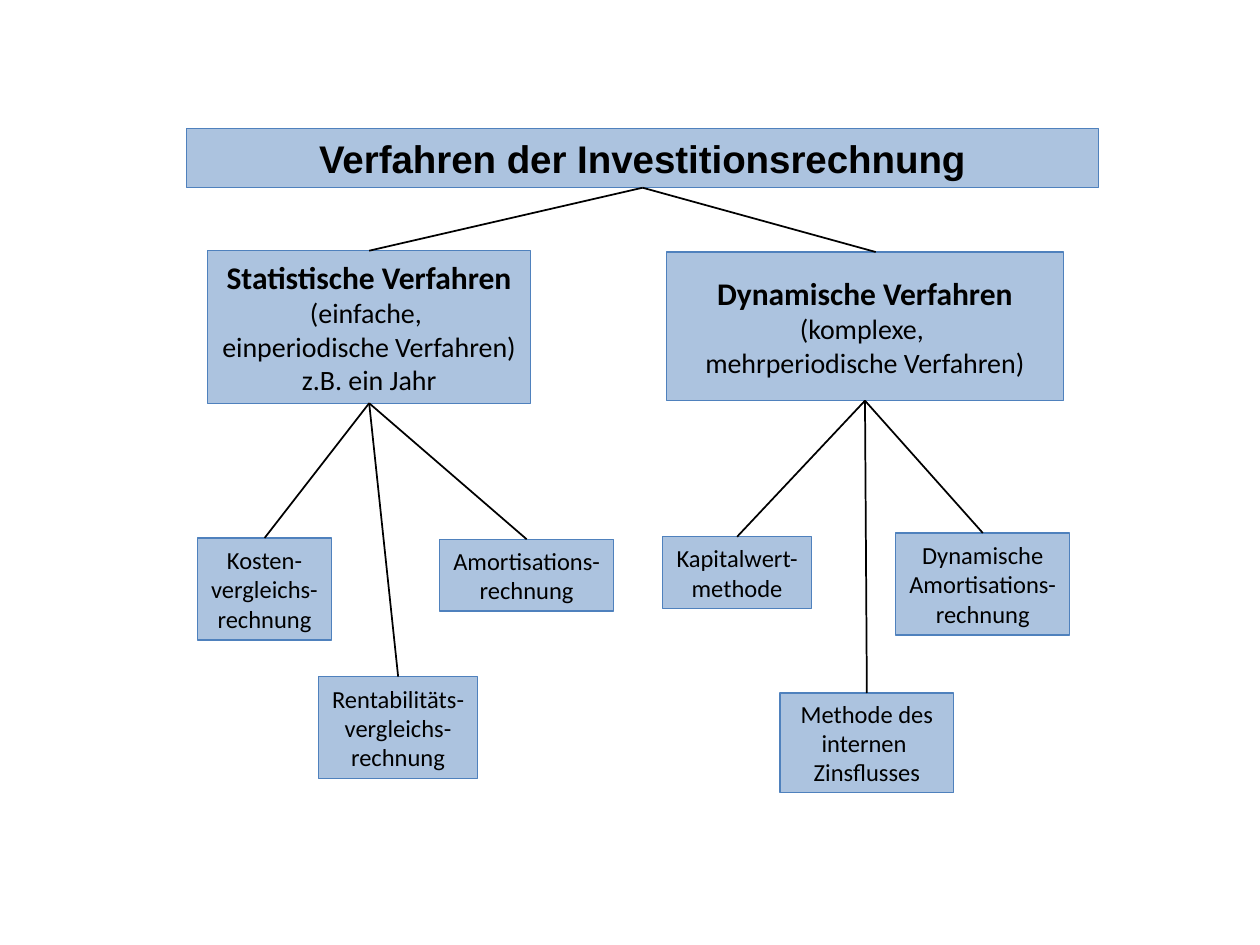
from dataclasses import dataclass

from lxml import etree
from pptx import Presentation
from pptx import util as u
from pptx.dml.color import RGBColor
from pptx.enum import shapes, text
from pptx.oxml.ns import qn

COLORS = {"box": "4F81BD", "ink": "000000"}
COLS, ROWS = 100, 75
BOTTOM, TOP = 2, 0

deck = Presentation()
deck.slide_width, deck.slide_height = u.Inches(10), u.Inches(7.5)
slide = deck.slides.add_slide(deck.slide_layouts[6])


@dataclass
class Box:
    """A node of the tree; places in grid columns and rows, body lines split by newline."""
    col: float
    row: float
    wide: float
    high: float
    paras: tuple[str, ...]
    size: int = 14
    head: str = ""


def across(cols: float) -> int:
    return round(deck.slide_width * cols / COLS)


def down(rows: float) -> int:
    return round(deck.slide_height * rows / ROWS)


def shade(name: str) -> RGBColor:
    return RGBColor.from_string(COLORS[name])


def draw_box(box: Box, line: float = 0.75):
    shape = slide.shapes.add_shape(
        shapes.MSO_SHAPE.RECTANGLE, across(box.col), down(box.row),
        across(box.wide), down(box.high))
    shape.shadow.inherit = False
    shape.fill.solid()
    shape.fill.fore_color.rgb = shade("box")
    tint = shape.fill._xPr.find(".//" + qn("a:srgbClr"))
    etree.SubElement(tint, qn("a:alpha"), val="47000")
    shape.line.color.rgb = shade("box")
    shape.line.width = u.Pt(line)

    frame = shape.text_frame
    frame.word_wrap = False
    frame.vertical_anchor = text.MSO_ANCHOR.MIDDLE
    for i, body in enumerate(box.paras):
        para = frame.add_paragraph() if i else frame.paragraphs[0]
        para.alignment = text.PP_ALIGN.CENTER
        para.font.name, para.font.size = "Calibri", u.Pt(box.size)
        para.font.color.rgb = shade("ink")
        if box.head and not i:
            run = para.add_run()
            run.text = box.head
            run.font.bold, run.font.size = True, u.Pt(18)
            para.add_line_break()
        for j, part in enumerate(body.split("\n")):
            if j:
                para.add_line_break()
            para.add_run().text = part
    return shape


def draw_link(upper, lower, end: tuple[float, float] | None = None) -> None:
    """Join two boxes, or run to a free end on the lower one's edge."""
    col, row = end or (0, 0)
    link = slide.shapes.add_connector(
        shapes.MSO_CONNECTOR.STRAIGHT, 0, 0, across(col), down(row))
    link.begin_connect(upper, BOTTOM)
    if not end:
        link.end_connect(lower, TOP)
    link.line.color.rgb = shade("ink")
    link.line.width = u.Pt(1)
    etree.SubElement(link._element.spPr, qn("a:effectLst"))


# Title bar
title = draw_box(Box(14.8, 10.2, 72.4, 4.7, ("Verfahren der Investitionsrechnung",), 22), 0.5)
font = title.text_frame.paragraphs[0].font
font.name, font.bold = "Arial", True

# Two branches, each with its methods
static = Box(16.5, 19.9, 25.6, 12.1,
             ("(einfache, \neinperiodische Verfahren)", "z.B. ein Jahr"),
             16, "Statistische Verfahren")
dynamic = Box(52.9, 20, 31.5, 11.8, ("(komplexe, \nmehrperiodische Verfahren)",),
              16, "Dynamische Verfahren")
TREE = [
    (static, None, [
        Box(15.7, 42.7, 10.6, 8.1, ("Kosten-\nvergleichs-\nrechnung",)),
        Box(25.3, 53.7, 12.6, 8.1, ("Rentabilitäts-\nvergleichs-\nrechnung",)),
        Box(34.9, 42.8, 13.8, 5.7, ("Amortisations-\nrechnung",)),
    ]),
    (dynamic, (69.5, 20), [
        Box(52.6, 42.6, 11.8, 5.7, ("Kapitalwert-", "methode")),
        Box(61.9, 55, 13.8, 7.9, ("Methode des\ninternen \nZinsflusses",)),
        Box(71.1, 42.3, 13.8, 8.1, ("Dynamische\nAmortisations-\nrechnung",)),
    ]),
]
for branch, end, leaves in TREE:
    node = draw_box(branch)
    draw_link(title, node, end)
    for leaf in leaves:
        draw_link(node, draw_box(leaf))

deck.save("out.pptx")
